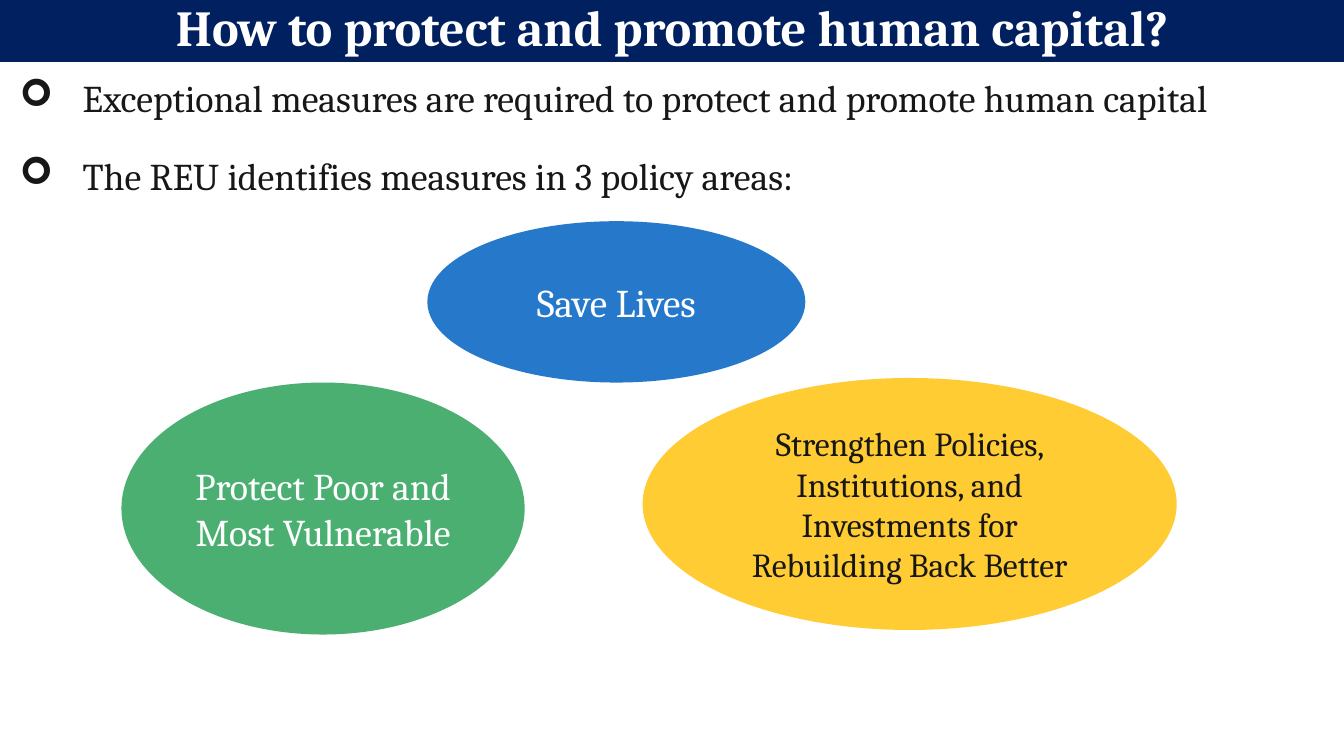
import pptx
import pptx.dml.color
import pptx.enum.shapes
import pptx.enum.text
import pptx.oxml.ns
import pptx.util
from lxml import etree

Pt = pptx.util.Pt
Shape = pptx.enum.shapes.MSO_SHAPE
Align = pptx.enum.text.PP_ALIGN
Anchor = pptx.enum.text.MSO_ANCHOR

PAGE_WIDTH, PAGE_HEIGHT = 1920, 1080
TITLE = "How to protect and promote human capital?"
BULLETS = [
    "Exceptional measures are required to protect and promote human capital",
    "The REU identifies measures in 3 policy areas:",
]
# text, (left, top, width, height), fill, opacity %, type size, text colour
POLICY_AREAS = [
    ("Save Lives", (610.5, 316, 540, 230.5), "blue", 93, "large", "white"),
    ("Protect Poor and Most Vulnerable", (173.5, 546.5, 576, 360),
     "green", 93, "body", "white"),
    ("Strengthen Policies, Institutions, and Investments for Rebuilding Back Better",
     (918, 540, 763, 360), "yellow", 80, "small", "ink"),
]
THEME = {
    "font": "Cambria",
    "colours": {"navy": "002060", "blue": "166FC6", "green": "3EA968",
                "yellow": "FFC000", "white": "FFFFFF", "ink": "171717"},
    "sizes": {"title": 72, "large": 56, "body": 54, "small": 48},
    "inset": 7.2,
    "line_spacing": 0.85,
    "bullet_indent": 90,
    "bullet_gap": 56,
}


def colour(name):
    return pptx.dml.color.RGBColor.from_string(THEME["colours"][name])


def add_child(parent, tag, **attributes):
    return etree.SubElement(parent, pptx.oxml.ns.qn(tag), attributes)


def set_frame(box, anchor):
    frame = box.text_frame
    frame.word_wrap = True
    frame.vertical_anchor = anchor
    frame.margin_left = frame.margin_right = Pt(THEME["inset"])
    frame.margin_top = frame.margin_bottom = Pt(THEME["inset"])
    return frame


def write(para, text, size, ink, align, bold=False):
    para.text = text
    para.alignment = align
    for span in para.runs:
        span.font.name = THEME["font"]
        span.font.size = Pt(THEME["sizes"][size])
        span.font.bold = bold
        span.font.color.rgb = colour(ink)


def add_filled(page, kind, place, fill, opacity=100):
    box = page.shapes.add_shape(kind, *map(Pt, place))
    box.shadow.inherit = False
    box.line.fill.background()
    box.fill.solid()
    box.fill.fore_color.rgb = colour(fill)
    if opacity < 100:
        solid = box.fill._xPr.find(pptx.oxml.ns.qn("a:solidFill"))
        add_child(solid[0], "a:alpha", val=str(opacity * 1000))
    return box


def add_bullet(para):
    """Give the paragraph an arrow bullet with a hanging indent."""
    indent = Pt(THEME["bullet_indent"])
    properties = para._p.get_or_add_pPr()
    properties.set("marL", str(indent))
    properties.set("indent", str(-indent))
    add_child(properties, "a:buFont", typeface="Wingdings")
    add_child(properties, "a:buChar", char="➢")


def build():
    deck = pptx.Presentation()
    deck.slide_width, deck.slide_height = Pt(PAGE_WIDTH), Pt(PAGE_HEIGHT)
    page = deck.slides.add_slide(deck.slide_layouts[6])

    for text, place, fill, opacity, size, ink in POLICY_AREAS:
        oval = add_filled(page, Shape.OVAL, place, fill, opacity)
        frame = set_frame(oval, Anchor.MIDDLE)
        write(frame.paragraphs[0], text, size, ink, Align.CENTER)

    bullet_box = page.shapes.add_textbox(Pt(21), Pt(110), Pt(1860), Pt(181.5))
    frame = set_frame(bullet_box, Anchor.TOP)
    for index, text in enumerate(BULLETS):
        para = frame.add_paragraph() if index else frame.paragraphs[0]
        write(para, text, "body", "ink", Align.LEFT)
        para.line_spacing = THEME["line_spacing"]
        para.space_before = Pt(THEME["bullet_gap"] if index else 0)
        add_bullet(para)

    title_bar = add_filled(page, Shape.RECTANGLE, (0, 0, PAGE_WIDTH, 88.5), "navy")
    para = set_frame(title_bar, Anchor.TOP).paragraphs[0]
    write(para, TITLE, "title", "white", Align.CENTER, bold=True)
    para.line_spacing = THEME["line_spacing"]

    deck.save("out.pptx")


if __name__ == "__main__":
    build()
